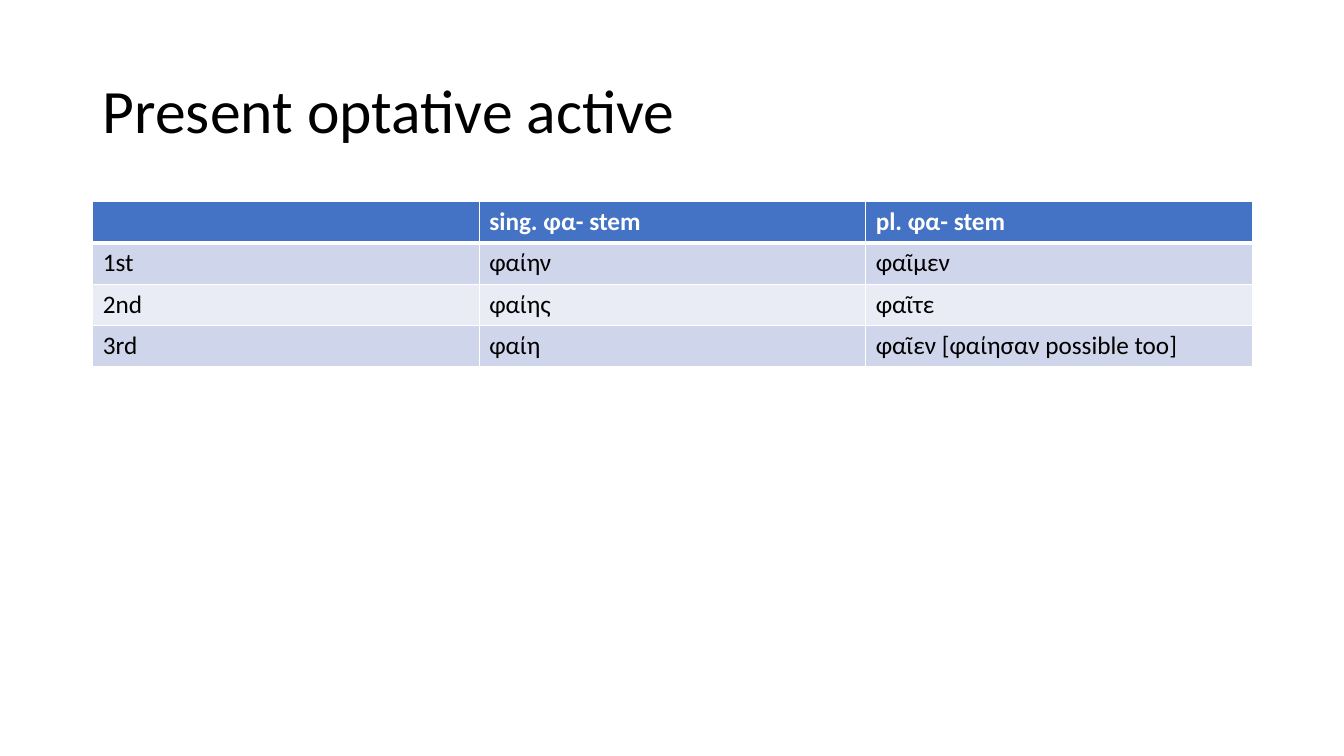
from lxml import etree
from pptx import Presentation
from pptx import util as u
from pptx.dml.color import RGBColor
from pptx.enum import text
from pptx.oxml import ns

WIDE, HIGH = u.Inches(13.33), u.Inches(7.5)
LEFT, SPAN = u.Inches(0.92), u.Inches(11.5)
ROW = u.Inches(0.41)

BLACK = RGBColor(0, 0, 0)
WHITE = RGBColor(0xFF, 0xFF, 0xFF)
BLUE = RGBColor(0x44, 0x72, 0xC4)
BANDS = RGBColor(0xE9, 0xEB, 0xF5), RGBColor(0xCF, 0xD5, 0xEA)

TITLE = {"name": "Calibri", "size": u.Pt(44), "bold": False}
HEAD = {"name": "Calibri", "size": u.Pt(18), "bold": True}
BODY = {**HEAD, "bold": False}

FORMS = [
    ("", "sing. φα- stem", "pl. φα- stem"),
    ("1st", "φαίην", "φαῖμεν"),
    ("2nd", "φαίης", "φαῖτε"),
    ("3rd", "φαίη", "φαῖεν [φαίησαν possible too]"),
]


def style(font, look, color):
    for key, value in look.items():
        setattr(font, key, value)
    font.color.rgb = color


def edge(cell, side, width):
    """Draw one white border; call before the cell is filled."""
    props = cell._tc.get_or_add_tcPr()
    line = etree.SubElement(props, ns.qn(f"a:ln{side}"), w=str(u.Pt(width)))
    fill = etree.SubElement(line, ns.qn("a:solidFill"))
    etree.SubElement(fill, ns.qn("a:srgbClr"), val=str(WHITE))


def add_title(slide, words):
    title = slide.shapes.title
    title.left, title.top = LEFT, u.Inches(0.4)
    title.width, title.height = SPAN, u.Inches(1.45)
    frame = title.text_frame
    frame.text = words
    frame.vertical_anchor = text.MSO_ANCHOR.MIDDLE
    para = frame.paragraphs[0]
    para.alignment = text.PP_ALIGN.LEFT
    para.line_spacing = 0.9
    style(para.runs[0].font, TITLE, BLACK)


def add_forms(slide, rows):
    count = len(rows)
    frame = slide.shapes.add_table(
        count, len(rows[0]), LEFT, u.Inches(2), SPAN, ROW * count)
    for r, row in enumerate(rows):
        for c, words in enumerate(row):
            cell = frame.table.cell(r, c)
            for side in "LRTB":
                thick = (r, side) in ((0, "B"), (1, "T"))
                edge(cell, side, 3 if thick else 1)
            cell.fill.solid()
            cell.fill.fore_color.rgb = BANDS[r % 2] if r else BLUE
            cell.text = words
            look, color = (BODY, BLACK) if r else (HEAD, WHITE)
            style(cell.text_frame.paragraphs[0].font, look, color)
            for run in cell.text_frame.paragraphs[0].runs:
                style(run.font, look, color)


def main():
    deck = Presentation()
    deck.slide_width, deck.slide_height = WIDE, HIGH
    slide = deck.slides.add_slide(deck.slide_layouts[5])
    add_title(slide, "Present optative active")
    add_forms(slide, FORMS)
    deck.save("out.pptx")


if __name__ == "__main__":
    main()
